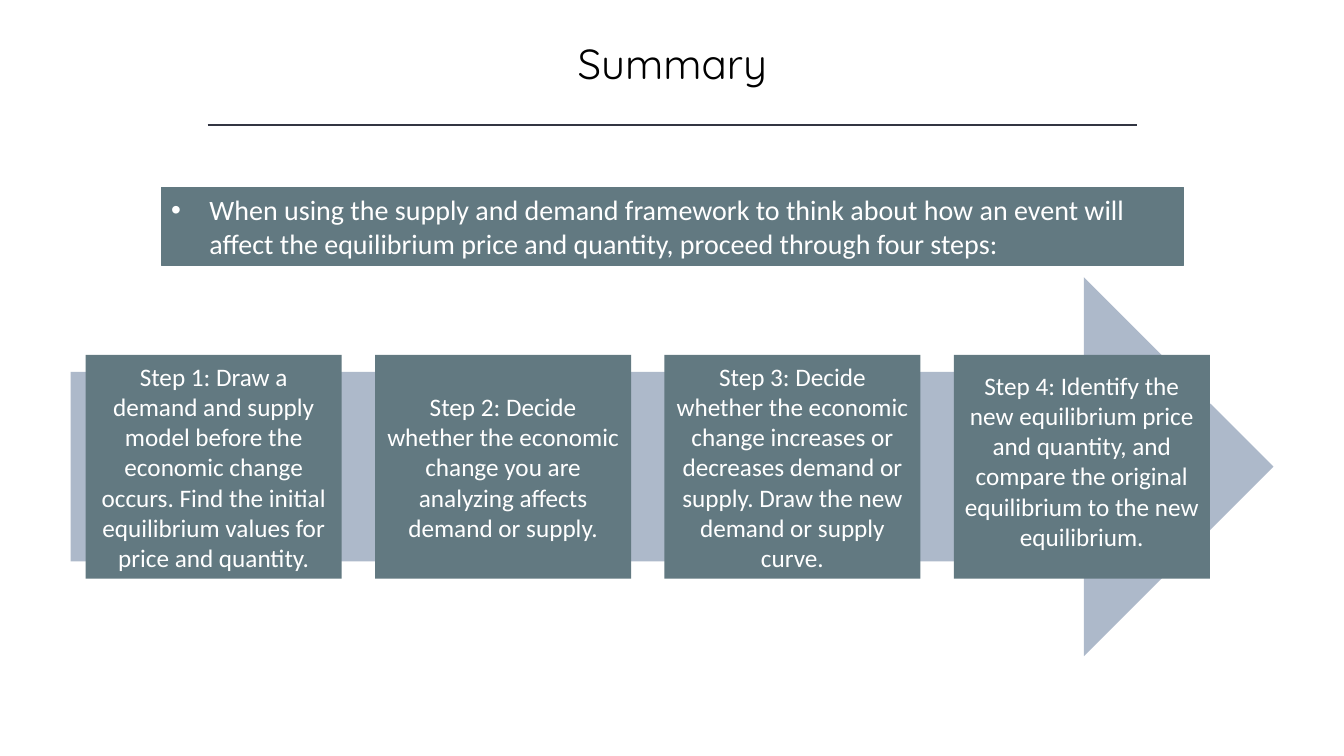
"""Build the four-step supply and demand summary slide."""
from dataclasses import dataclass

from lxml import etree
from pptx import Presentation, util as u
from pptx.dml.color import RGBColor
from pptx.enum import shapes, text
from pptx.oxml.ns import qn

WHITE = RGBColor(0xFF, 0xFF, 0xFF)
BLACK = RGBColor(0x00, 0x00, 0x00)
SLATE = RGBColor(0x62, 0x79, 0x81)
NAVY = RGBColor(0x32, 0x35, 0x42)
PALE_BLUE = RGBColor(0xAD, 0xB9, 0xCA)

SLIDE_WIDTH, SLIDE_HEIGHT = u.Inches(13.33), u.Inches(7.5)
FIRST_STEP, STEP_PITCH = 6.38, 21.53


@dataclass(frozen=True)
class Area:
    """Rectangle in percent of the slide's width and height."""

    left: float
    top: float
    width: float
    height: float

    def lengths(self) -> tuple:
        """Return left, top, width and height as slide lengths."""
        return (across(self.left), down(self.top),
                across(self.width), down(self.height))


@dataclass(frozen=True)
class Step:
    """One step of the process, with the space kept free below its words."""

    wording: str
    bottom_inset: float = 0.05


TITLE_AREA = Area(12.53, 4.27, 75, 8.13)
INTRO_AREA = Area(12, 24.8, 76.07, 10.27)
ARROW_AREA = Area(5.25, 36.67, 89.5, 50.13)

INTRO = ("When using the supply and demand framework to think about how an event "
         "will affect the equilibrium price and quantity, proceed through four steps:")
STEPS = [
    Step("Step 1: Draw a demand and supply model before the economic change occurs. "
         "Find the initial equilibrium values for price and quantity."),
    Step("Step 2: Decide whether the economic change you are analyzing affects "
         "demand or supply."),
    Step("Step 3: Decide whether the economic change increases or decreases demand "
         "or supply. Draw the new demand or supply curve."),
    Step("Step 4: Identify the new equilibrium price and quantity, and compare the "
         "original equilibrium to the new equilibrium.", 0.17),
]


def across(percent: float) -> u.Emu:
    """Convert a percentage of the slide's width to a length."""
    return u.Emu(round(SLIDE_WIDTH * percent / 100))


def down(percent: float) -> u.Emu:
    """Convert a percentage of the slide's height to a length."""
    return u.Emu(round(SLIDE_HEIGHT * percent / 100))


def write(shape, wording: str, size: float, align, font="Calibri", color=WHITE):
    """Put one formatted paragraph in a shape and return it."""
    frame = shape.text_frame
    frame.word_wrap = True
    frame.auto_size = text.MSO_AUTO_SIZE.NONE
    frame.vertical_anchor = text.MSO_ANCHOR.MIDDLE
    frame.text = wording
    paragraph = frame.paragraphs[0]
    paragraph.alignment = align
    paragraph.font.size = u.Pt(size)
    paragraph.font.name = font
    paragraph.font.color.rgb = color
    return paragraph


def add_block(slide, kind, area: Area, color: RGBColor):
    """Add a flat, filled shape without outline."""
    block = slide.shapes.add_shape(kind, *area.lengths())
    block.shadow.inherit = False
    block.fill.solid()
    block.fill.fore_color.rgb = color
    block.line.fill.background()
    return block


def add_bullet(paragraph, indent: u.Length) -> None:
    """Give a paragraph a round bullet with a hanging indent."""
    properties = paragraph._p.get_or_add_pPr()
    properties.set("marL", str(int(indent)))
    properties.set("indent", str(-int(indent)))
    bullet_font = etree.Element(qn("a:buFont"), typeface="Arial")
    bullet = etree.Element(qn("a:buChar"), char="•")
    properties.insert(0, bullet_font)
    properties.insert(1, bullet)


def add_rule(slide, left: float, right: float, top: float) -> None:
    """Draw the thin horizontal line below the title."""
    rule = slide.shapes.add_connector(
        shapes.MSO_CONNECTOR.STRAIGHT,
        across(left), down(top), across(right), down(top))
    rule.line.color.rgb = NAVY
    rule.line.width = u.Pt(1)
    etree.SubElement(rule._element.spPr, qn("a:effectLst"))


def add_step(slide, index: int, step: Step) -> None:
    """Place one step card in its column on the arrow."""
    area = Area(FIRST_STEP + index * STEP_PITCH, 46.93, 19.05, 29.6)
    card = add_block(slide, shapes.MSO_SHAPE.RECTANGLE, area, SLATE)
    card.text_frame.margin_bottom = u.Inches(step.bottom_inset)
    write(card, step.wording, 18, text.PP_ALIGN.CENTER)


def main() -> None:
    """Create the slide and save it."""
    deck = Presentation()
    deck.slide_width, deck.slide_height = SLIDE_WIDTH, SLIDE_HEIGHT
    slide = deck.slides.add_slide(deck.slide_layouts.get_by_name("Title Only"))

    title = slide.shapes.title
    title.left, title.top, title.width, title.height = TITLE_AREA.lengths()
    write(title, "Summary", 30, text.PP_ALIGN.CENTER, "Quicksand", BLACK)
    add_rule(slide, 15.45, 84.62, 16.53)

    intro = add_block(slide, shapes.MSO_SHAPE.RECTANGLE, INTRO_AREA, SLATE)
    intro.line.color.rgb = SLATE
    intro.line.width = u.Pt(0.75)
    add_bullet(write(intro, INTRO, 20, text.PP_ALIGN.LEFT), u.Inches(0.38))

    add_block(slide, shapes.MSO_SHAPE.RIGHT_ARROW, ARROW_AREA, PALE_BLUE)
    for index, step in enumerate(STEPS):
        add_step(slide, index, step)

    deck.save("out.pptx")


if __name__ == "__main__":
    main()
